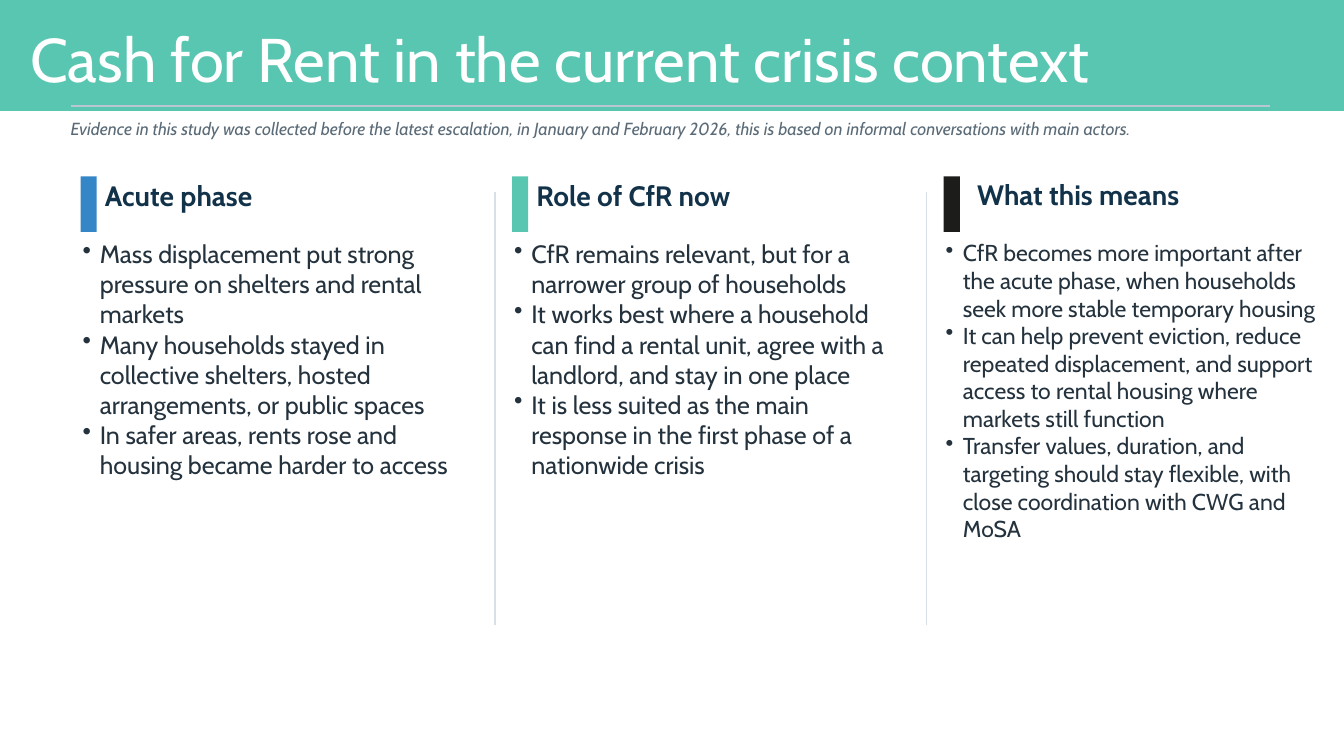
from dataclasses import dataclass

import pptx
import pptx.dml.color
import pptx.enum.shapes
import pptx.enum.text
import pptx.util
from lxml import etree
from pptx.oxml.ns import qn

Inches = pptx.util.Inches
Anchor = pptx.enum.text.MSO_ANCHOR


@dataclass(frozen=True)
class Theme:
    font: str = "Cabin"
    white: str = "FFFFFF"
    teal: str = "59C6B1"
    blue: str = "3586C7"
    black: str = "1C1C1B"
    heading: str = "12324A"
    body: str = "24323D"
    muted: str = "5A6B77"
    rule: str = "B8C7D1"
    divider: str = "D7E0E6"
    title_size: float = 44
    heading_size: float = 20
    body_size: float = 17.9
    dense_size: float = 16.4
    note_size: float = 12.5


THEME = Theme()

# Heading, accent, body size, heading offset (x, y) and bullets of each column
COLUMNS = [
    ("Acute phase", THEME.blue, THEME.body_size, (0.24, 0.01), [
        "Mass displacement put strong pressure on shelters and rental markets",
        "Many households stayed in collective shelters, hosted arrangements, or public spaces",
        "In safer areas, rents rose and housing became harder to access",
    ]),
    ("Role of CfR now", THEME.teal, THEME.body_size, (0.24, 0.01), [
        "CfR remains relevant, but for a narrower group of households",
        "It works best where a household can find a rental unit, agree with a landlord, "
        "and stay in one place",
        "It is less suited as the main response in the first phase of a nationwide crisis",
    ]),
    ("What this means", THEME.black, THEME.dense_size, (0.33, 0), [
        "CfR becomes more important after the acute phase, when households seek more stable "
        "temporary housing",
        "It can help prevent eviction, reduce repeated displacement, and support access to "
        "rental housing where markets still function",
        "Transfer values, duration, and targeting should stay flexible, with close "
        "coordination with CWG and MoSA",
    ]),
]


def rgb(value):
    return pptx.dml.color.RGBColor.from_string(value)


def add_bullet(para, indent=0.17):
    properties = para._p.get_or_add_pPr()
    properties.set("marL", str(Inches(indent)))
    properties.set("indent", str(-Inches(indent)))
    etree.SubElement(properties, qn("a:buChar")).set("char", "•")


def add_text(page, texts, left, top, width, height, *, size, color, bold=False,
             italic=False, anchor=Anchor.MIDDLE, inset=(0, 0), bullets=False,
             line_spacing=None):
    box = page.shapes.add_textbox(Inches(left), Inches(top), Inches(width), Inches(height))
    frame = box.text_frame
    frame.word_wrap = True
    frame.vertical_anchor = anchor
    frame.margin_left = frame.margin_right = Inches(inset[0])
    frame.margin_top = frame.margin_bottom = Inches(inset[1])
    for index, text in enumerate(texts):
        para = frame.paragraphs[0] if index == 0 else frame.add_paragraph()
        if bullets:
            add_bullet(para)
        if line_spacing:
            para.line_spacing = line_spacing
        span = para.add_run()
        span.text = text
        span.font.name = THEME.font
        span.font.size = pptx.util.Pt(size)
        span.font.color.rgb = rgb(color)
        span.font.bold = bold
        span.font.italic = italic


def add_block(page, left, top, width, height, color, outline=None):
    block = page.shapes.add_shape(pptx.enum.shapes.MSO_SHAPE.RECTANGLE, Inches(left),
                                  Inches(top), Inches(width), Inches(height))
    block.shadow.inherit = False
    block.fill.solid()
    block.fill.fore_color.rgb = rgb(color)
    if outline:
        block.line.color.rgb = rgb(color)
        block.line.width = pptx.util.Pt(outline)
    else:
        block.line.fill.background()


def add_line(page, x1, y1, x2, y2, color):
    line = page.shapes.add_connector(pptx.enum.shapes.MSO_CONNECTOR.STRAIGHT,
                                     Inches(x1), Inches(y1), Inches(x2), Inches(y2))
    line.line.color.rgb = rgb(color)
    line.line.width = pptx.util.Pt(1)
    etree.SubElement(line._element.spPr, qn("a:effectLst"))


def add_header(page, left, top, width, height):
    # Title band, rule and note below
    add_block(page, left, top, width, height, THEME.teal, outline=1.5)
    add_text(page, ["Cash for Rent in the current crisis context"],
             left + 0.2, top - 0.1, 11.5, 1.45, size=THEME.title_size,
             color=THEME.white, inset=(0.1, 0.05), line_spacing=0.9)
    add_line(page, left + 0.7, top + 1.05, left + 12.6, top + 1.05, THEME.rule)
    add_text(page, ["Evidence in this study was collected before the latest escalation, in "
                    "January and February 2026, this is based on informal conversations "
                    "with main actors."],
             left + 0.7, top + 1.12, 11.5, 0.31, size=THEME.note_size,
             color=THEME.muted, italic=True)


def add_column(page, left, top, height, column):
    heading, accent, size, (shift_x, shift_y), points = column
    # Accent marker and heading
    add_block(page, left, top + 0.03, 0.16, 0.55, accent)
    add_text(page, [heading], left + shift_x, top + shift_y, 3.69, 0.42,
             size=THEME.heading_size, color=THEME.heading, bold=True)
    # Bullet list
    add_text(page, points, left + 0.02, top + 0.65, 3.85, height - 0.65, size=size,
             color=THEME.body, anchor=Anchor.TOP, bullets=True)


def add_columns(page, left, top, height, pitch=4.28):
    for index, column in enumerate(COLUMNS):
        x = left + index * pitch
        # Divider in the gap before every column but the first
        if index:
            add_line(page, x - 0.17, top + 0.18, x - 0.17, top + height, THEME.divider)
        add_column(page, x, top, height, column)


def main():
    deck = pptx.Presentation()
    deck.slide_width, deck.slide_height = Inches(13.33), Inches(7.5)
    page = deck.slides.add_slide(deck.slide_layouts[6])
    add_header(page, 0, 0, 13.33, 1.09)
    add_columns(page, 0.8, 1.72, 4.48)
    deck.save("out.pptx")


if __name__ == "__main__":
    main()
